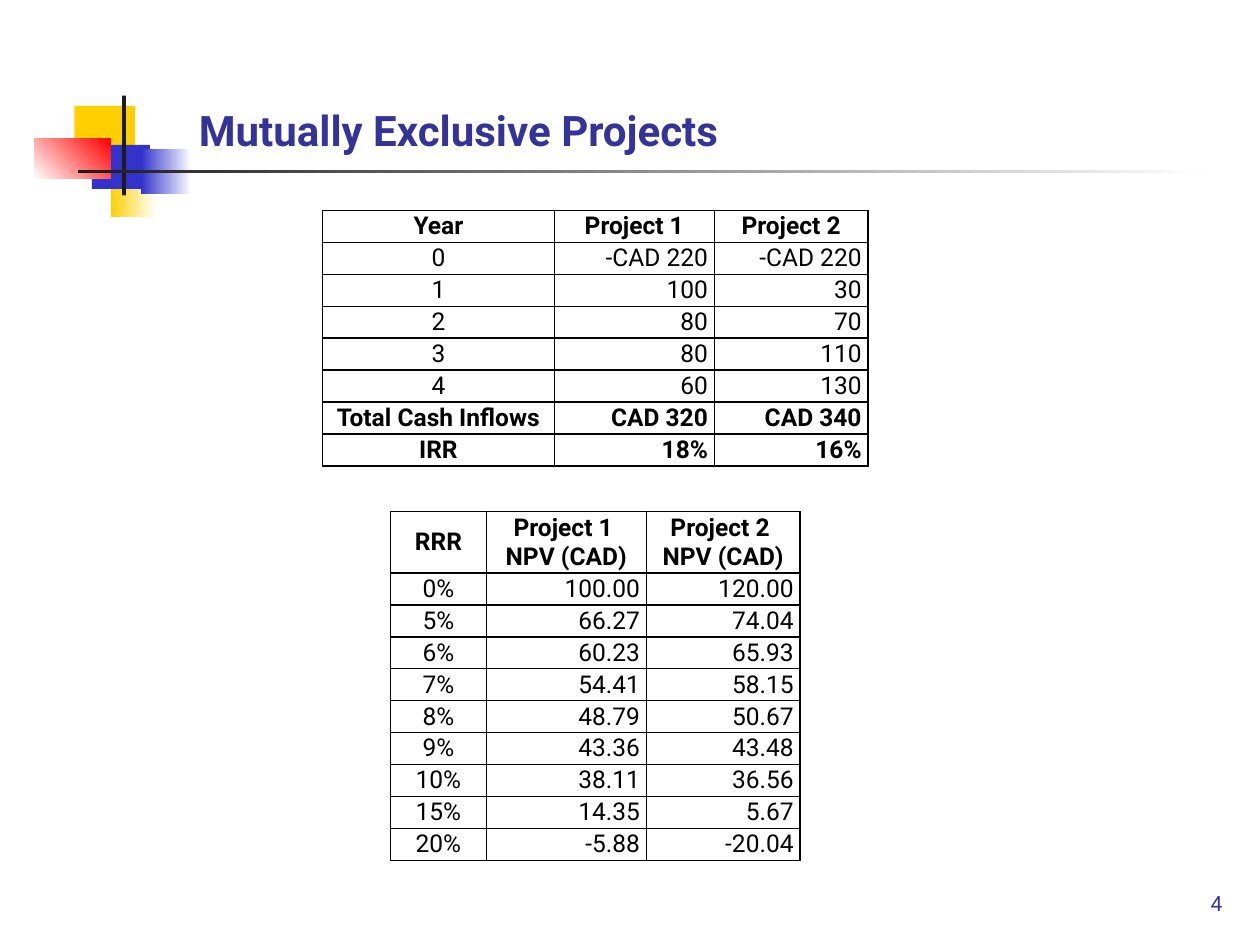
import pptx
import pptx.util
import pptx.dml.color
import pptx.enum.shapes
import pptx.enum.text
import pptx.oxml
import pptx.oxml.ns

Inches = pptx.util.Inches
Pt = pptx.util.Pt
RGBColor = pptx.dml.color.RGBColor
ALIGN = pptx.enum.text.PP_ALIGN
ANCHOR = pptx.enum.text.MSO_ANCHOR

WHITE = RGBColor(0xFF, 0xFF, 0xFF)
BLACK = RGBColor(0, 0, 0)
INK = RGBColor(0x1C, 0x1C, 0x1C)
GOLD = RGBColor(0xFF, 0xCF, 0x01)
BLUE = RGBColor(0x33, 0x33, 0xCC)
NAVY = RGBColor(0x33, 0x33, 0x99)
RED = RGBColor(0xFF, 0, 0)


def write(frame, text, size, color, bold, align):
    """Put each line of text in a paragraph of its own."""
    for i, line in enumerate(text.split("\n")):
        para = frame.add_paragraph() if i else frame.paragraphs[0]
        para.alignment = align
        run = para.add_run()
        run.text = line
        run.font.name = "Roboto"
        run.font.size = Pt(size)
        run.font.bold = bold
        run.font.color.rgb = color


def add_grid(left, top, widths, heights, rows, strong):
    """Add a ruled table; the rows numbered in strong are bold."""
    frame = slide.shapes.add_table(
        len(rows), len(widths), Inches(left), Inches(top),
        Inches(sum(widths)), Inches(sum(heights)))
    table = frame.table
    table.first_row = table.horz_banding = False
    for col, width in zip(table.columns, widths):
        col.width = Inches(width)
    for r, row in enumerate(rows):
        table.rows[r].height = Inches(heights[r])
        for c, text in enumerate(row):
            cell = table.cell(r, c)
            cell.fill.background()
            cell.vertical_anchor = ANCHOR.MIDDLE
            cell.margin_left = cell.margin_right = Inches(0.05)
            cell.margin_top = cell.margin_bottom = Inches(0.01)
            align = ALIGN.CENTER if r == 0 or c == 0 else ALIGN.RIGHT
            write(cell.text_frame, text, 14, BLACK, r in strong, align)
            props = cell._tc.get_or_add_tcPr()
            for i, side in enumerate("LRTB"):
                props.insert(i, pptx.oxml.parse_xml(
                    f'<a:ln{side} {pptx.oxml.ns.nsdecls("a")} w="{Pt(1)}">'
                    f'<a:solidFill><a:srgbClr val="{BLACK}"/></a:solidFill>'
                    f'</a:ln{side}>'))


deck = pptx.Presentation()
deck.slide_width = Inches(10)
deck.slide_height = Inches(7.5)
slide = deck.slides.add_slide(deck.slide_layouts[6])

# Corner blocks and rules: left, top, width, height, start, end, angle
blocks = [
    (0.88, 1.2, 0.36, 0.52, GOLD, WHITE, 0),
    (0.59, 0.84, 0.48, 0.35, GOLD, None, 0),
    (0.73, 1.15, 0.46, 0.35, BLUE, None, 0),
    (1.12, 1.18, 0.4, 0.36, BLUE, WHITE, 0),
    (0.27, 1.1, 0.61, 0.32, WHITE, RED, 45),
    (0.97, 0.76, 0.03, 0.79, INK, None, 0),
    (0.62, 1.35, 9, 0.02, INK, WHITE, 0),
]
for *box, start, end, angle in blocks:
    block = slide.shapes.add_shape(
        pptx.enum.shapes.MSO_SHAPE.RECTANGLE, *map(Inches, box))
    block.shadow.inherit = False
    block.line.fill.background()
    if end is None:
        block.fill.solid()
        block.fill.fore_color.rgb = start
    else:
        block.fill.gradient()
        block.fill.gradient_angle = angle
        for stop, color in zip(block.fill.gradient_stops, (start, end)):
            stop.color.rgb = color

# Title and page number
labels = [
    (1.48, 0.44, 5.01, 0.84, "Mutually Exclusive Projects", 24, True, ALIGN.LEFT),
    (7.52, 6.82, 2.28, 0.5, "4", 12, False, ALIGN.RIGHT),
]
for *box, text, size, bold, align in labels:
    frame = slide.shapes.add_textbox(*map(Inches, box)).text_frame
    frame.word_wrap = True
    frame.vertical_anchor = ANCHOR.BOTTOM
    write(frame, text, size, NAVY, bold, align)

flows = [
    ("Year", "Project 1", "Project 2"),
    ("0", "-CAD 220", "-CAD 220"),
    ("1", "100", "30"),
    ("2", "80", "70"),
    ("3", "80", "110"),
    ("4", "60", "130"),
    ("Total Cash Inflows", "CAD 320", "CAD 340"),
    ("IRR", "18%", "16%"),
]
add_grid(2.56, 1.67, (1.84, 1.27, 1.22), [0.25] * 8, flows, (0, 6, 7))

values = [
    ("RRR", "Project 1 \nNPV (CAD)", "Project 2 \nNPV (CAD)"),
    ("0%", "100.00", "120.00"),
    ("5%", "66.27", "74.04"),
    ("6%", "60.23", "65.93"),
    ("7%", "54.41", "58.15"),
    ("8%", "48.79", "50.67"),
    ("9%", "43.36", "43.48"),
    ("10%", "38.11", "36.56"),
    ("15%", "14.35", "5.67"),
    ("20%", "-5.88", "-20.04"),
]
add_grid(3.1, 4.06, (0.76, 1.27, 1.22), [0.48] + [0.25] * 9, values, (0,))

deck.save("out.pptx")
